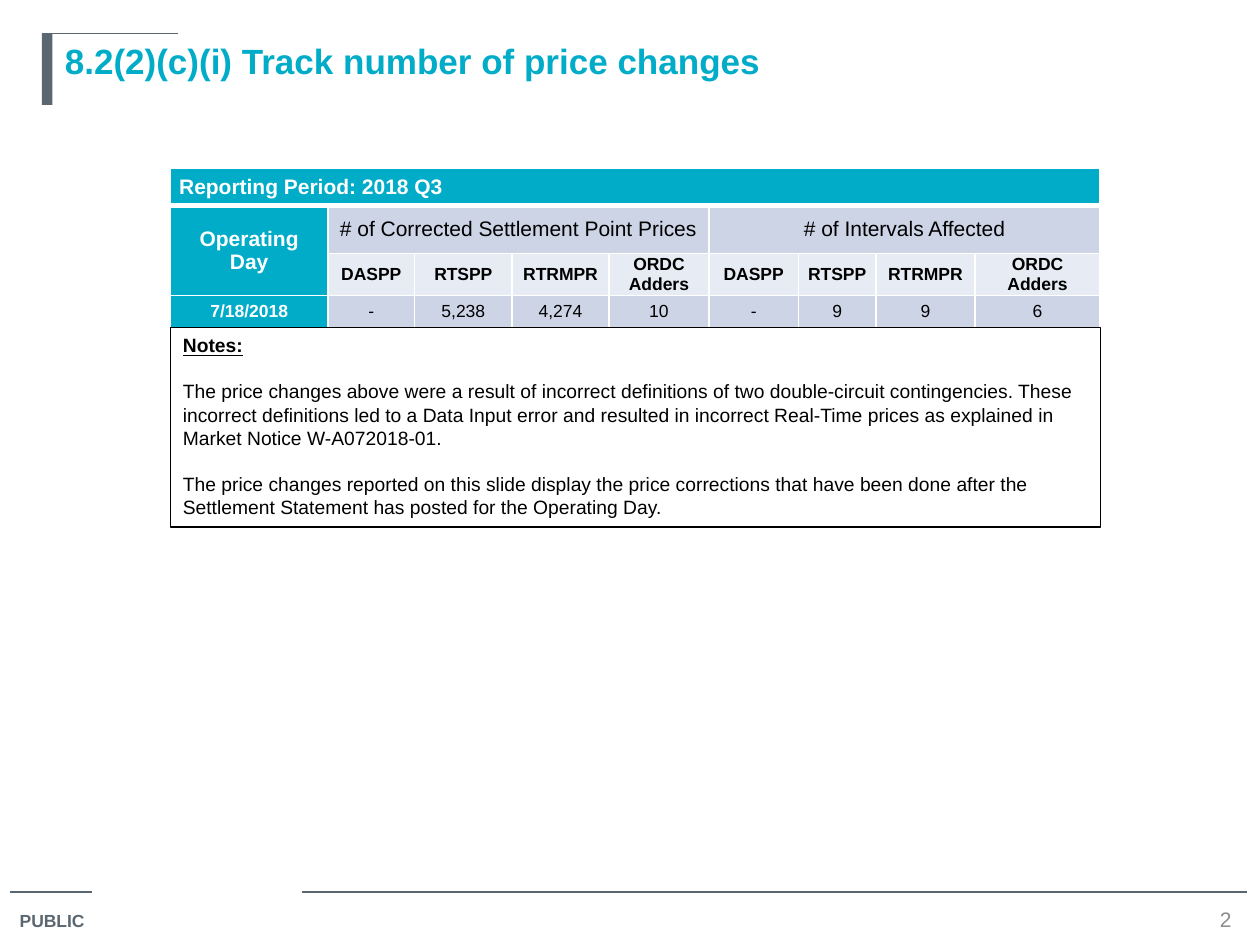
import dataclasses

import lxml.etree
import pptx
import pptx.dml.color
import pptx.enum.shapes
import pptx.enum.text
import pptx.oxml.ns
import pptx.util

Pt = pptx.util.Pt
Align = pptx.enum.text.PP_ALIGN
Anchor = pptx.enum.text.MSO_ANCHOR


@dataclasses.dataclass(frozen=True)
class Theme:
    font: str = "Arial"
    teal: str = "00ACC8"
    slate: str = "5B6770"
    grey: str = "8C8C8C"
    black: str = "000000"
    white: str = "FFFFFF"
    band: str = "CCD4E6"
    pale: str = "E7EBF3"
    title: float = 20
    heading: float = 12
    notes: float = 11
    small: float = 10


theme = Theme()
color = pptx.dml.color.RGBColor.from_string


def write(frame, text, size=theme.small, ink=theme.black, bold=False, underline=False,
          align=Align.LEFT, anchor=Anchor.TOP, wrap=True, space_before=0, append=False):
    """Write one formatted paragraph into a text frame."""
    frame.word_wrap = wrap
    frame.vertical_anchor = anchor
    paragraph = frame.add_paragraph() if append else frame.paragraphs[0]
    paragraph.alignment = align
    paragraph.space_before = Pt(space_before)
    run = paragraph.add_run()
    run.text = text
    run.font.name = theme.font
    run.font.size = Pt(size)
    run.font.bold = bold
    run.font.underline = underline
    run.font.color.rgb = color(ink)


def add_border(cell, side, width):
    """Add one white cell border; call before the cell is filled."""
    qn = pptx.oxml.ns.qn
    properties = cell._tc.get_or_add_tcPr()
    line = lxml.etree.SubElement(properties, qn(f"a:ln{side}"), w=str(Pt(width)))
    fill = lxml.etree.SubElement(line, qn("a:solidFill"))
    lxml.etree.SubElement(fill, qn("a:srgbClr"), val=theme.white)


presentation = pptx.Presentation()
presentation.slide_width, presentation.slide_height = Pt(720), Pt(540)
slide = presentation.slides.add_slide(presentation.slide_layouts[6])
shapes = slide.shapes

# Rules of the header and footer
for start, end, y in [(6, 52.5, 509.8), (172.5, 712.8, 509.8), (24, 102, 19.2)]:
    rule = shapes.add_connector(pptx.enum.shapes.MSO_CONNECTOR.STRAIGHT,
                                Pt(start), Pt(y), Pt(end), Pt(y))
    rule.line.color.rgb = color(theme.slate)
    rule.line.width = Pt(0.75)
    lxml.etree.SubElement(rule._element.spPr, pptx.oxml.ns.qn("a:effectLst"))

# Title accent bar
bar = shapes.add_shape(pptx.enum.shapes.MSO_SHAPE.RECTANGLE, Pt(24), Pt(19.2), Pt(6), Pt(40.8))
bar.shadow.inherit = False
bar.fill.solid()
bar.fill.fore_color.rgb = color(theme.slate)
bar.line.fill.background()

# Title, classification and page number
title = shapes.add_textbox(Pt(30), Pt(19.2), Pt(666), Pt(90))
write(title.text_frame, "8.2(2)(c)(i) Track number of price changes",
      size=theme.title, ink=theme.teal, bold=True)
classification = shapes.add_textbox(Pt(4.2), Pt(516.4), Pt(55.5), Pt(20))
write(classification.text_frame, "PUBLIC", ink=theme.slate, bold=True, wrap=False)
page_number = shapes.add_textbox(Pt(690), Pt(517), Pt(18), Pt(16.6))
write(page_number.text_frame, "2", size=theme.heading, ink=theme.grey,
      align=Align.CENTER, anchor=Anchor.MIDDLE, wrap=False)

# Price change table
left, top = 97.4, 96
column_widths = [90, 49.5, 55.7, 55.4, 57.2, 51.1, 44.3, 56.6, 71.6]
row_heights = [21.6, 27.2, 23.2, 18.8]
width, height = sum(column_widths), sum(row_heights)
measures = ["DASPP", "RTSPP", "RTRMPR", "ORDC Adders"]
rows = [
    ["Reporting Period: 2018 Q3"] + [""] * 8,
    ["Operating Day", "# of Corrected Settlement Point Prices", "", "", "",
     "# of Intervals Affected", "", "", ""],
    [""] + measures * 2,
    ["7/18/2018", "-", "5,238", "4,274", "10", "-", "9", "9", "6"],
]
row_fills = [theme.teal, theme.band, theme.pale, theme.band]

table = shapes.add_table(len(rows), len(column_widths),
                         Pt(left), Pt(top), Pt(width), Pt(height)).table
table.first_row = table.horz_banding = False
for column, column_width in zip(table.columns, column_widths):
    column.width = Pt(column_width)
for row, row_height in zip(table.rows, row_heights):
    row.height = Pt(row_height)
for first, last in [((0, 0), (0, 8)), ((1, 0), (2, 0)), ((1, 1), (1, 4)), ((1, 5), (1, 8))]:
    table.cell(*first).merge(table.cell(*last))

for r, texts in enumerate(rows):
    for c, text in enumerate(texts):
        cell = table.cell(r, c)
        is_header = r == 0 or c == 0
        for side in "LRTB":
            is_thick = (r, side) in [(0, "B"), (1, "T")]
            add_border(cell, side, 3 if is_thick else 1)
        cell.fill.solid()
        cell.fill.fore_color.rgb = color(theme.teal if is_header else row_fills[r])
        cell.margin_left = cell.margin_right = Pt(5)
        cell.margin_top = cell.margin_bottom = Pt(0)
        cell.vertical_anchor = Anchor.MIDDLE
        if text:
            write(cell.text_frame, text,
                  size=theme.heading if r < 2 else theme.small,
                  ink=theme.white if is_header else theme.black,
                  bold=is_header or r == 2,
                  align=Align.LEFT if r == 0 else Align.CENTER,
                  anchor=Anchor.MIDDLE)

# Notes under the table
notes = shapes.add_shape(pptx.enum.shapes.MSO_SHAPE.RECTANGLE,
                         Pt(left), Pt(187.2), Pt(width), Pt(114))
notes.shadow.inherit = False
notes.fill.background()
notes.line.color.rgb = color(theme.black)
notes.line.width = Pt(0.75)
write(notes.text_frame, "Notes:", size=theme.notes, bold=True, underline=True)
for text in [
    "The price changes above were a result of incorrect definitions of two double-circuit "
    "contingencies. These incorrect definitions led to a Data Input error and resulted in "
    "incorrect Real-Time prices as explained in Market Notice W-A072018-01.",
    "The price changes reported on this slide display the price corrections that have been "
    "done after the Settlement Statement has posted for the Operating Day.",
]:
    write(notes.text_frame, text, size=theme.notes, space_before=13, append=True)

presentation.save("out.pptx")
